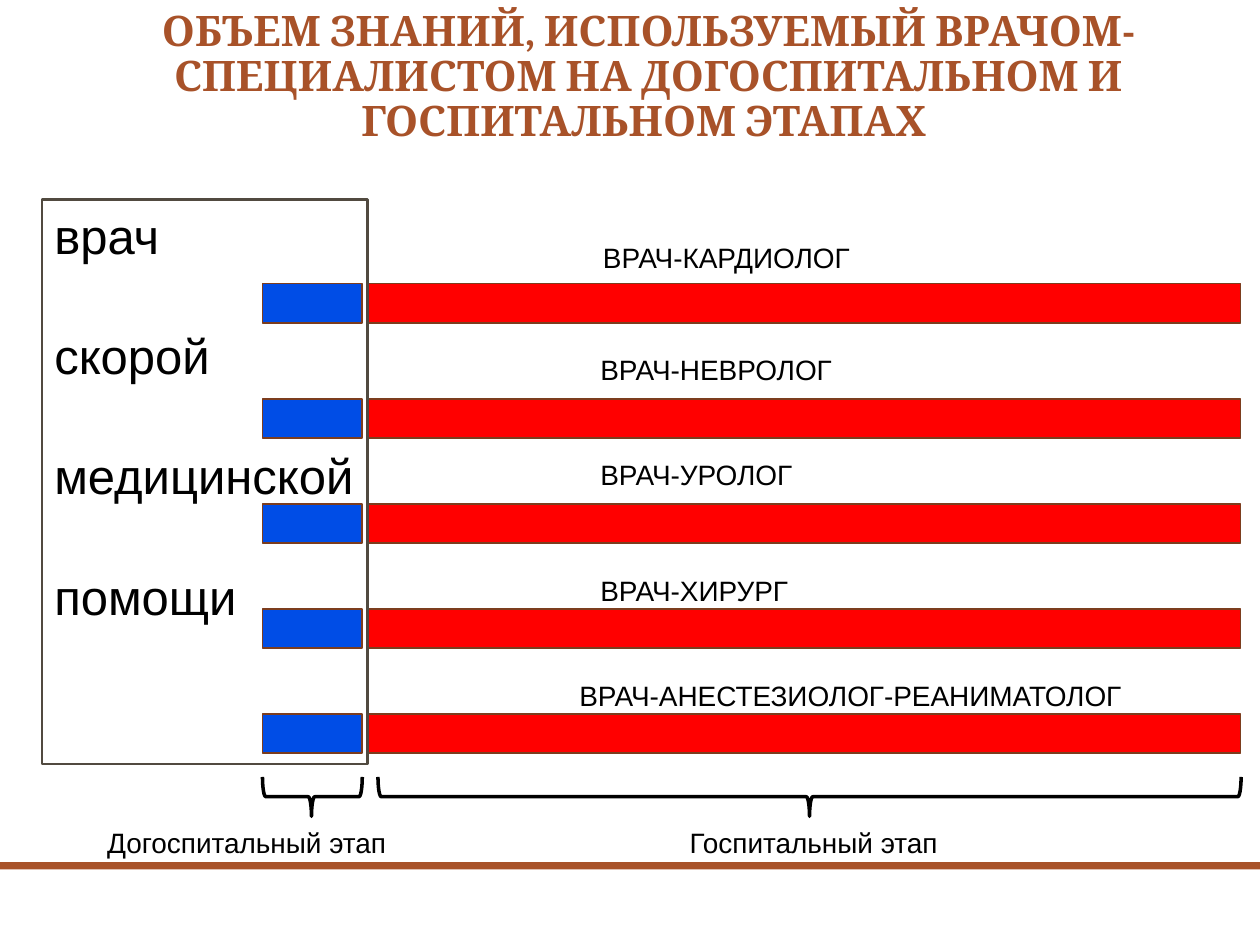
from pptx import Presentation
from pptx.dml.color import RGBColor
from pptx.enum.shapes import MSO_SHAPE
from pptx.enum.text import MSO_ANCHOR, MSO_AUTO_SIZE, PP_ALIGN
from pptx.util import Inches, Pt

COLS, ROWS = 24, 18
WIDTH, HEIGHT = Inches(10), Inches(7.5)
COLORS = {"accent": "A85229", "red": "FF0000", "blue": "004DE6",
          "bar_line": "7C3D1E", "frame": "514A40", "text": "000000"}
BAR_H, LABEL_H = 0.75, 0.89
PRE_X, PRE_W = 5, 1.9
HOSP_X, HOSP_W = 7, 16.63
SPECIALISTS = [
    ("ВРАЧ-КАРДИОЛОГ", 11.25, 4.47, 5.4),
    ("ВРАЧ-НЕВРОЛОГ", 11.2, 6.6, 7.6),
    ("ВРАЧ-УРОЛОГ", 11.2, 8.6, 9.6),
    ("ВРАЧ-ХИРУРГ", 11.2, 10.8, 11.6),
    ("ВРАЧ-АНЕСТЕЗИОЛОГ-РЕАНИМАТОЛОГ", 10.8, 12.8, 13.6),
]


def rgb(name):
    """Return the palette colour as RGBColor."""
    return RGBColor.from_string(COLORS[name])


def grid(x, y, w, h):
    """Turn grid columns and rows into slide lengths."""
    return (int(WIDTH * x / COLS), int(HEIGHT * y / ROWS),
            int(WIDTH * w / COLS), int(HEIGHT * h / ROWS))


def style_text(p, size, color="text", font="Arial", align=PP_ALIGN.LEFT, bold=False):
    """Format a paragraph and its runs."""
    p.alignment = align
    for r in p.runs:
        r.font.size, r.font.name, r.font.bold = Pt(size), font, bold
        r.font.color.rgb = rgb(color)


def add_box(slide, x, y, w, h, fill=None, line=None, weight=1, kind=MSO_SHAPE.RECTANGLE):
    """Add a preset shape with the given fill and outline."""
    sp = slide.shapes.add_shape(kind, *grid(x, y, w, h))
    sp.shadow.inherit = False
    if fill:
        sp.fill.solid()
        sp.fill.fore_color.rgb = rgb(fill)
    else:
        sp.fill.background()
    if line:
        sp.line.color.rgb = rgb(line)
        sp.line.width = Pt(weight)
    else:
        sp.line.fill.background()
    return sp


def add_label(slide, text, x, y, w, align=PP_ALIGN.LEFT):
    """Add a one-line label."""
    tf = slide.shapes.add_textbox(*grid(x, y, w, LABEL_H)).text_frame
    tf.word_wrap = True
    tf.text = text
    style_text(tf.paragraphs[0], 16, align=align)


def add_brace(slide, x, y, w, middle):
    """Add a brace that spans w columns and points down."""
    sp = add_box(slide, x + (w - BAR_H) / 2, y + (BAR_H - w) / 2, BAR_H, w,
                 line="text", weight=2, kind=MSO_SHAPE.LEFT_BRACE)
    sp.rotation = 270
    sp.adjustments[0], sp.adjustments[1] = 0.083, middle


def add_title(slide, text):
    """Fill and place the title placeholder."""
    sp = slide.shapes.title
    sp.left, sp.top, sp.width, sp.height = grid(2, 1.2, 20.7, 1.7)
    tf = sp.text_frame
    tf.text = text
    tf.word_wrap = True
    tf.auto_size = MSO_AUTO_SIZE.NONE
    tf.vertical_anchor = MSO_ANCHOR.BOTTOM
    p = tf.paragraphs[0]
    p.line_spacing = 0.9
    style_text(p, 24, "accent", "Cambria", PP_ALIGN.CENTER, True)


def add_frame(slide, words):
    """Add the outlined box with one word a paragraph."""
    tf = add_box(slide, 0.8, 3.8, 6.2, 10.75, line="frame", weight=1.5).text_frame
    tf.word_wrap = True
    tf.vertical_anchor = MSO_ANCHOR.TOP
    tf.text = "\n".join(words)
    for i, p in enumerate(tf.paragraphs):
        p.space_before = Pt(35 if i else 0)
        style_text(p, 28)


def main():
    """Build the slide and save it."""
    prs = Presentation()
    prs.slide_width, prs.slide_height = WIDTH, HEIGHT
    slide = prs.slides.add_slide(prs.slide_layouts[5])
    add_box(slide, 0, 16.42, COLS, 0.14, "accent")
    add_title(slide, "ОБЪЕМ ЗНАНИЙ, ИСПОЛЬЗУЕМЫЙ ВРАЧОМ-СПЕЦИАЛИСТОМ "
                     "НА ДОГОСПИТАЛЬНОМ И ГОСПИТАЛЬНОМ ЭТАПАХ ")
    for name, x, y, bar_y in SPECIALISTS:
        add_box(slide, HOSP_X, bar_y, HOSP_W, BAR_H, "red", "bar_line")
        add_box(slide, PRE_X, bar_y, PRE_W, BAR_H, "blue", "bar_line")
        add_label(slide, name, x, y, 11)
    add_frame(slide, ["врач", "скорой", "медицинской", "помощи"])
    add_brace(slide, PRE_X, 14.8, PRE_W, 0.491)
    add_brace(slide, 7.2, 14.8, 16.44, 0.5)
    add_label(slide, "Догоспитальный этап", 0, 15.6, 9.4, PP_ALIGN.CENTER)
    add_label(slide, "Госпитальный этап", 11.8, 15.6, 7.4, PP_ALIGN.CENTER)
    prs.save("out.pptx")


if __name__ == "__main__":
    main()
